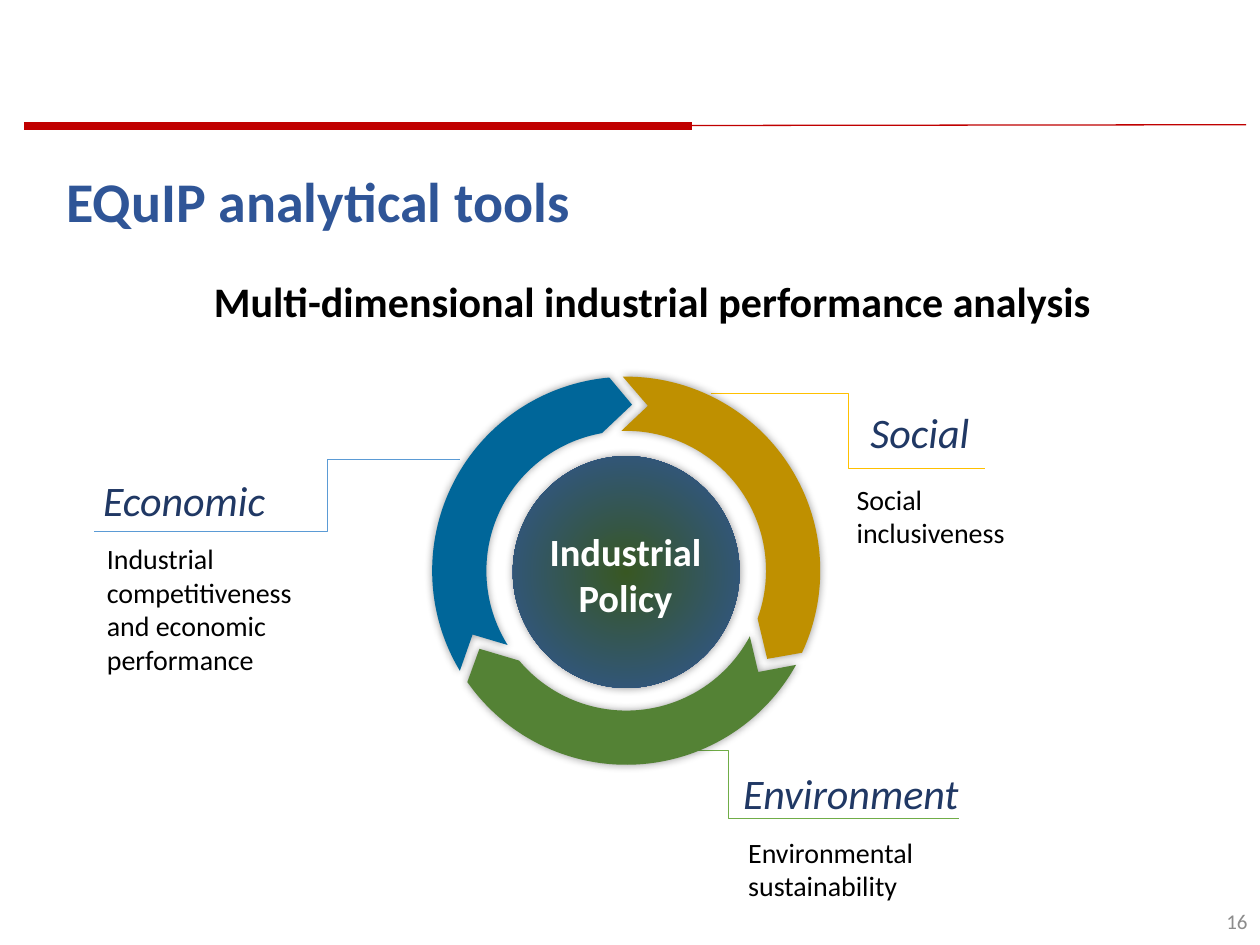
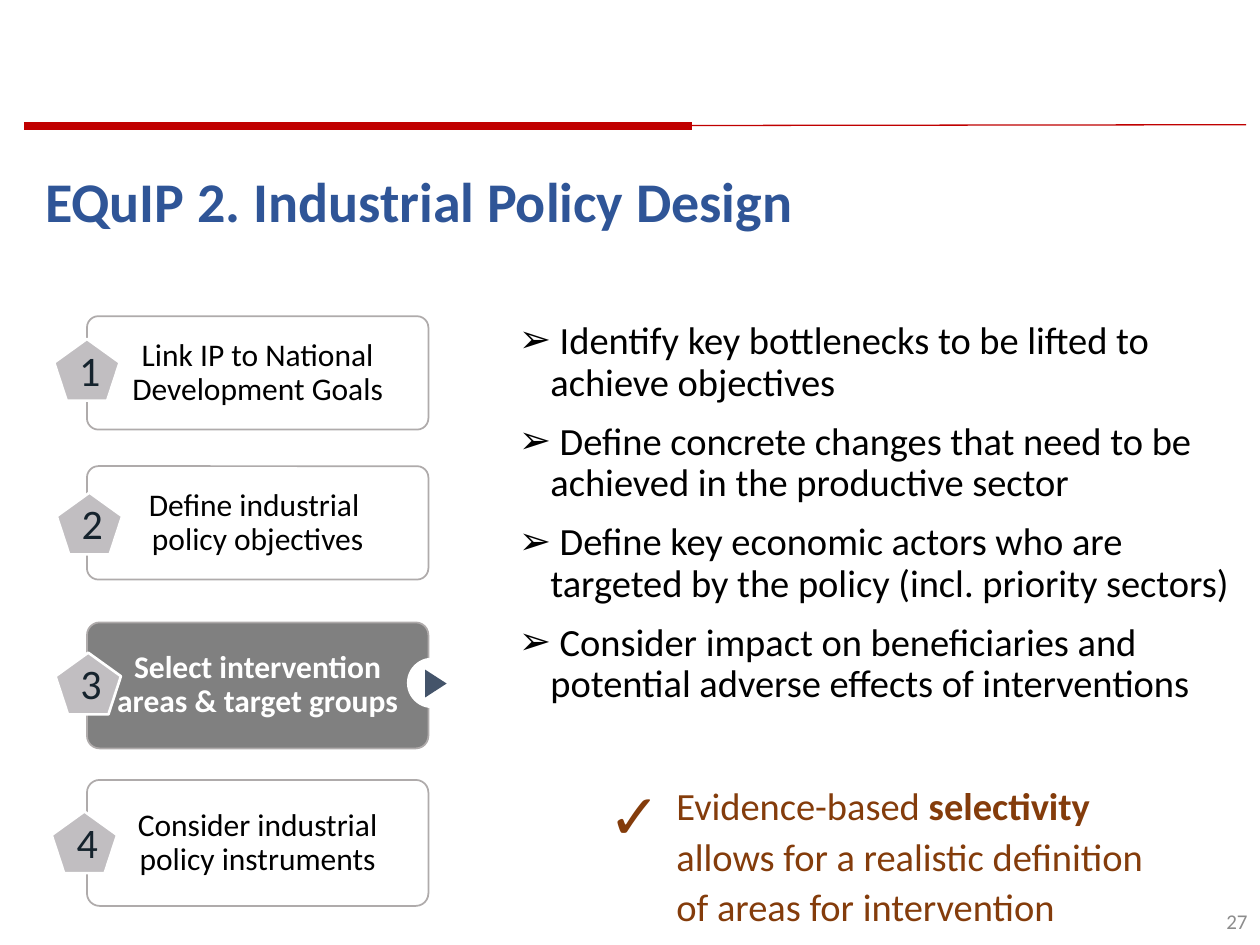
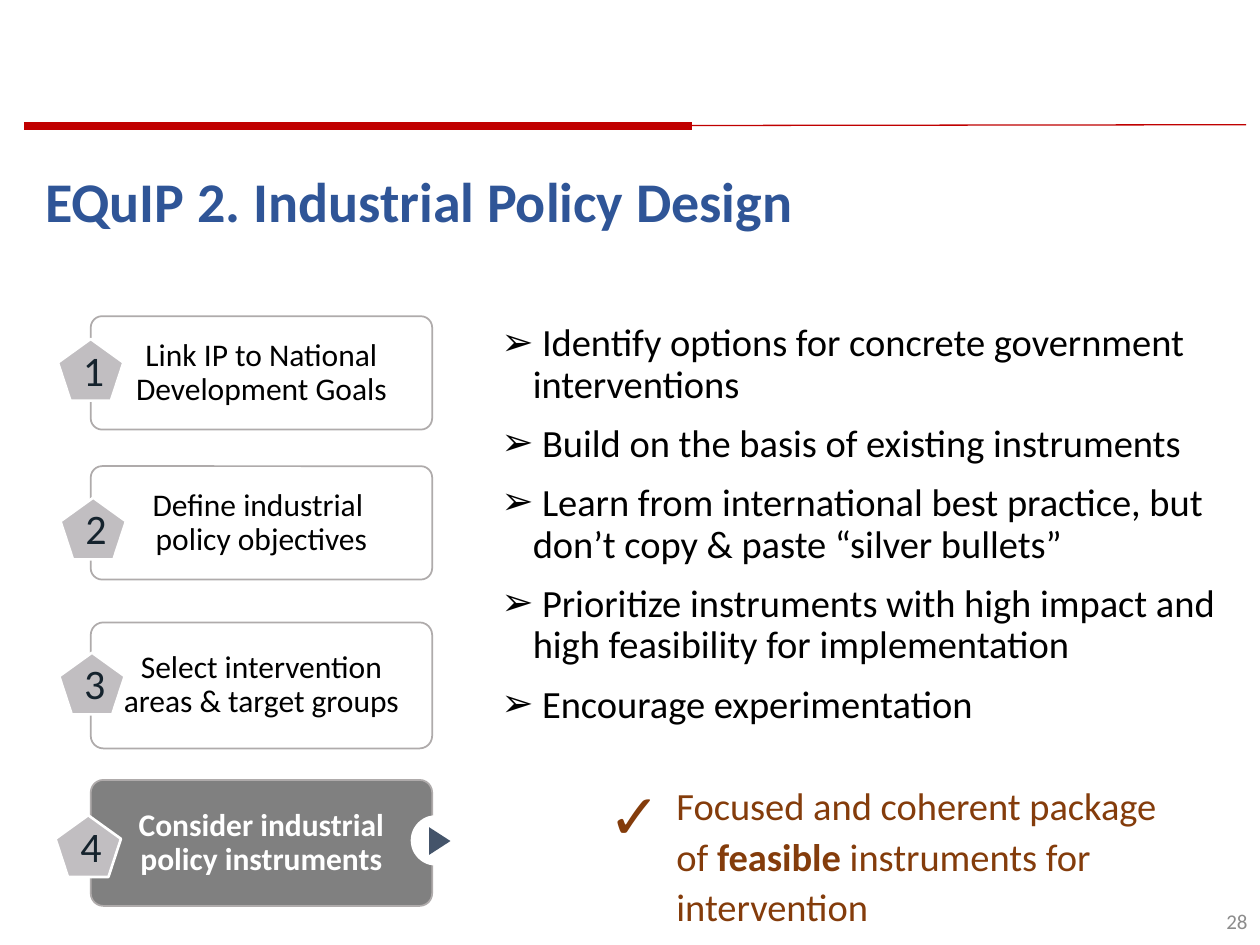
from math import cos, radians, sin, tan

from lxml.etree import SubElement
from pptx import Presentation
from pptx.dml.color import RGBColor
from pptx.enum.shapes import MSO_CONNECTOR as LINE, MSO_SHAPE as SHAPE
from pptx.enum.text import MSO_ANCHOR as ANCHOR, PP_ALIGN as ALIGN
from pptx.oxml import parse_xml
from pptx.oxml.ns import nsdecls, qn
from pptx.util import Inches, Pt

FONT = "Calibri"
BLACK = RGBColor(0x00, 0x00, 0x00)
WHITE = RGBColor(0xFF, 0xFF, 0xFF)
RED = RGBColor(0xC0, 0x00, 0x00)
TITLE_BLUE = RGBColor(0x2F, 0x55, 0x97)
NAVY = RGBColor(0x20, 0x38, 0x64)
SKY = RGBColor(0x5B, 0x9B, 0xD5)
AMBER = RGBColor(0xFF, 0xC0, 0x00)
LEAF = RGBColor(0x70, 0xAD, 0x47)
GOLD = RGBColor(0xBF, 0x90, 0x00)
GREEN = RGBColor(0x54, 0x82, 0x35)
TEAL = RGBColor(0x00, 0x66, 0x99)
DARK_GREEN = RGBColor(0x38, 0x57, 0x23)
GREY = RGBColor(0x80, 0x80, 0x80)
EDGE_GREY = RGBColor(0xAF, 0xAB, 0xAB)
BADGE_GREY = RGBColor(0xC1, 0xBE, 0xC1)
PAGE_GREY = RGBColor(0x8C, 0x8C, 0x8C)
INK = RGBColor(0x15, 0x23, 0x2D)
SLATE = RGBColor(0x44, 0x54, 0x6A)
BROWN = RGBColor(0x84, 0x3C, 0x0B)

W, H = 10, 7.5

DIMENSIONS = [
    dict(name="Economic", name_at=(0.72, 3.72, 2.6, 0.5),
         text="Industrial competitiveness and economic performance",
         text_at=(0.75, 4.25, 1.69, 1.18),
         start=(0.75, 4.22), end=(3.65, 3.65), bend_x=2.6, color=SKY),
    dict(name="Social", name_at=(6.81, 3.18, 1.12, 0.5),
         text="Social inclusiveness", text_at=(6.7, 3.78, 1.48, 0.64),
         start=(5.64, 3.12), end=(7.82, 3.72), bend_x=6.73, color=AMBER),
    dict(name="Environment", name_at=(5.8, 6.04, 2.25, 0.5),
         text="Environmental sustainability", text_at=(5.84, 6.58, 2.17, 0.64),
         start=(7.61, 6.5), end=(5.34, 5.96), bend_x=5.78, color=LEAF),
]

RING_COLORS = [GOLD, GREEN, TEAL]
RING_CENTER = (4.97, 4.53)
RING_TILT = 4.5
R_OUT, R_MID, R_IN = 1.54, 1.32, 1.11

STEPS = [
    ("Link IP to National Development Goals", 2.51, 0.9),
    ("Define industrial \vpolicy objectives", 3.7, 0.9),
    ("Select intervention areas & target groups", 4.94, 1),
    ("Consider industrial policy instruments", 6.19, 1),
]
BADGE_DX = [-0.26, -0.24, -0.25, -0.28]

DESIGN_SLIDES = [
    dict(page=27, left=0.69, active=2, badge_tops=[2.69, 3.91, 5.18, 6.44],
         body_at=(4.02, 2.5, 5.85, 3.71),
         bullets=[
             " Identify key bottlenecks to be lifted to achieve objectives",
             " Define concrete changes that need to be achieved in the productive sector",
             " Define key economic actors who are targeted by the policy (incl. priority sectors)",
             " Consider impact on beneficiaries and potential adverse effects of interventions",
         ],
         lesson="Evidence-based *selectivity* allows for a realistic definition of areas for intervention"),
    dict(page=28, left=0.72, active=3, badge_tops=[2.69, 3.95, 5.18, 6.47],
         body_at=(3.88, 2.52, 5.95, 3.71),
         bullets=[
             " Identify options for concrete government interventions",
             " Build on the basis of existing instruments",
             " Learn from international best practice, but don’t copy & paste “silver bullets”",
             " Prioritize instruments with high impact and high feasibility for implementation",
             " Encourage experimentation",
         ],
         lesson="Focused and coherent package of *feasible* instruments for intervention"),
]


def write(sp, paras, size=16, color=BLACK, bold=False, italic=False, align=ALIGN.LEFT,
          anchor=ANCHOR.TOP, spacing=1.0, before=0, bullet=None, wrap=True, margin=None):
    tf = sp.text_frame
    tf.word_wrap = wrap
    tf.vertical_anchor = anchor
    if margin is not None:
        tf.margin_left = tf.margin_right = tf.margin_top = tf.margin_bottom = Inches(margin)
    for i, text in enumerate([paras] if isinstance(paras, str) else paras):
        p = tf.add_paragraph() if i else tf.paragraphs[0]
        p.alignment = align
        p.line_spacing = spacing
        if i:
            p.space_before = Pt(before)
        if bullet:
            pPr = p._p.get_or_add_pPr()
            pPr.set("marL", str(Inches(0.25)))
            pPr.set("indent", str(-Inches(0.25)))
            SubElement(pPr, qn("a:buFont")).set("typeface", FONT)
            SubElement(pPr, qn("a:buChar")).set("char", bullet)
        for j, part in enumerate(text.split("*")):
            for k, line in enumerate(part.split("\v")):
                if k:
                    p.add_line_break()
                r = p.add_run()
                r.text = line
                f = r.font
                f.name, f.size, f.italic = FONT, Pt(size), italic
                f.bold = bold or j % 2 == 1
                f.color.rgb = color
    return sp


def add_text(s, at, paras, **fmt):
    return write(s.shapes.add_textbox(*map(Inches, at)), paras, **fmt)


def paint(sp, fill=None, line=None, width=1):
    sp.shadow.inherit = False
    if fill is None:
        sp.fill.background()
    else:
        sp.fill.solid()
        sp.fill.fore_color.rgb = fill
    if line is None:
        sp.line.fill.background()
    else:
        sp.line.color.rgb = line
        sp.line.width = Pt(width)
    return sp


def add_shape(s, kind, at, **look):
    return paint(s.shapes.add_shape(kind, *map(Inches, at)), **look)


def add_line(s, start, end, color, width, bend_x=None):
    kind = LINE.STRAIGHT if bend_x is None else LINE.ELBOW
    c = s.shapes.add_connector(kind, *map(Inches, start + end))
    c.line.color.rgb = color
    c.line.width = Pt(width)
    spPr = c._element.spPr
    SubElement(spPr, qn("a:effectLst"))
    if bend_x is not None:
        share = (bend_x - start[0]) / (end[0] - start[0])
        guides = spPr.find(qn("a:prstGeom")).get_or_add_avLst()
        gd = SubElement(guides, qn("a:gd"))
        gd.set("name", "adj1")
        gd.set("fmla", f"val {round(share * 100000)}")


def add_glow(sp):
    effects = sp._element.spPr.find(qn("a:effectLst"))
    effects.append(parse_xml(
        f'<a:outerShdw {nsdecls("a")} blurRad="{Pt(5)}" dist="0" dir="0">'
        '<a:srgbClr val="000000"><a:alpha val="40000"/></a:srgbClr></a:outerShdw>'))


def radial_fill(sp, inner, outer):
    sp.fill.gradient()
    grad = sp._element.spPr.find(qn("a:gradFill"))
    grad.getparent().replace(grad, parse_xml(
        f'<a:gradFill {nsdecls("a")} rotWithShape="1"><a:gsLst>'
        f'<a:gs pos="0"><a:srgbClr val="{inner}"/></a:gs>'
        f'<a:gs pos="98000"><a:srgbClr val="{outer}"/></a:gs></a:gsLst>'
        '<a:path path="circle"><a:fillToRect l="50000" t="50000" r="50000" b="50000"/>'
        '</a:path></a:gradFill>'))


def ring_point(radius, angle):
    cx, cy = RING_CENTER
    a = radians(angle - RING_TILT)
    return Inches(cx + radius * sin(a)), Inches(cy - radius * cos(a))


def arc(radius, first, last, parts=2):
    step = (last - first) / parts
    reach = 4 / 3 * tan(radians(step / 4))
    handle = radius * (1 + reach ** 2) ** 0.5
    lean = step / abs(step) * abs(atan_deg(reach))
    curves = []
    for i in range(parts):
        a, b = first + i * step, first + (i + 1) * step
        curves.append(("cubicBezTo", [ring_point(handle, a + lean),
                                      ring_point(handle, b - lean),
                                      ring_point(radius, b)]))
    return curves


def atan_deg(x):
    return (x - x ** 3 / 3 + x ** 5 / 5) / radians(1)


def add_ring_arrow(s, turn, color):
    rim = [ring_point(R_OUT, a) for a in range(-1, 116)]
    tip, notch = ring_point(R_MID, 122), ring_point(R_MID, 7.5)
    fb = s.shapes.build_freeform(*rim[0])
    fb.add_line_segments(rim[1:] + [tip, ring_point(R_IN, 110), ring_point(R_IN, -2), notch],
                         close=True)
    sp = fb.convert_to_shape()
    steps = [("moveTo", rim[:1]), *arc(R_OUT, -1, 115),
             ("lnTo", [tip]), ("lnTo", [ring_point(R_IN, 110)]), *arc(R_IN, 110, -2),
             ("lnTo", [notch]), ("close", [])]
    outline = next(sp._element.iter(qn("a:path")))
    for child in list(outline):
        outline.remove(child)
    for tag, points in steps:
        node = SubElement(outline, qn(f"a:{tag}"))
        for x, y in points:
            pt = SubElement(node, qn("a:pt"))
            pt.set("x", str(x - sp.left))
            pt.set("y", str(y - sp.top))
    cx, cy = map(Inches, RING_CENTER)
    dx, dy = sp.left + sp.width / 2 - cx, sp.top + sp.height / 2 - cy
    a = radians(turn)
    sp.left = round(cx + dx * cos(a) - dy * sin(a) - sp.width / 2)
    sp.top = round(cy + dx * sin(a) + dy * cos(a) - sp.height / 2)
    sp.rotation = turn
    add_glow(paint(sp, fill=color))


def new_slide(prs, title, left, page):
    s = prs.slides.add_slide(prs.slide_layouts[6])
    add_text(s, (W - 2.25, 7.11, 2.25, 0.4), str(page), size=12, color=PAGE_GREY,
             align=ALIGN.RIGHT, anchor=ANCHOR.MIDDLE)
    add_line(s, (0.19, 1), (5.49, 1), RED, 4.5)
    add_line(s, (2.67, 1), (9.89, 0.99), RED, 0.75)
    add_text(s, (left, 1.13, 9.06, 0.98), title, size=32, color=TITLE_BLUE, bold=True,
             anchor=ANCHOR.MIDDLE, spacing=0.9)
    return s


def tools_slide(prs):
    s = new_slide(prs, "EQuIP analytical tools", 0.43, 16)
    add_text(s, (1.6, 2.14, 7.23, 0.5), "Multi-dimensional industrial performance analysis",
             size=24, bold=True, wrap=False)
    for d in DIMENSIONS:
        add_line(s, d["start"], d["end"], d["color"], 0.5, d["bend_x"])
        add_text(s, d["name_at"], d["name"], size=24, color=NAVY, italic=True)
        add_text(s, d["text_at"], d["text"])
    for i, color in enumerate(RING_COLORS):
        add_ring_arrow(s, RING_TILT + i * 360 / len(RING_COLORS), color)
    hub = add_shape(s, SHAPE.OVAL, (4.07, 3.62, 1.8, 1.84))
    radial_fill(hub, DARK_GREEN, TITLE_BLUE)
    add_glow(hub)
    add_text(s, (4.05, 4.14, 1.83, 0.84), "Industrial Policy", size=22, color=WHITE,
             bold=True, align=ALIGN.CENTER)


def design_slide(prs, page, left, active, badge_tops, body_at, bullets, lesson):
    s = new_slide(prs, "EQuIP 2. Industrial Policy Design", 0.26, page)
    for i, (text, top, height) in enumerate(STEPS):
        on = i == active
        box = add_shape(s, SHAPE.ROUNDED_RECTANGLE, (left, top, 2.71, height),
                        fill=GREY if on else None, line=EDGE_GREY)
        box.adjustments[0] = 0.1
        write(box, text, size=18, color=WHITE if on else BLACK, bold=on,
              align=ALIGN.CENTER, anchor=ANCHOR.MIDDLE, spacing=0.9, margin=0.12)
    for i, (dx, top) in enumerate(zip(BADGE_DX, badge_tops), 1):
        badge = add_shape(s, SHAPE.REGULAR_PENTAGON, (left + dx, top, 0.52, 0.49),
                          fill=BADGE_GREY, line=WHITE, width=1.5)
        write(badge, str(i), size=24, color=INK, align=ALIGN.CENTER, anchor=ANCHOR.BOTTOM)
    _, top, height = STEPS[active]
    middle = top + height / 2 - 0.02
    add_shape(s, SHAPE.OVAL, (left + 2.54, middle - 0.2, 0.4, 0.4), fill=WHITE)
    arrow = add_shape(s, SHAPE.ISOSCELES_TRIANGLE, (left + 2.66, middle - 0.08, 0.22, 0.17),
                      fill=SLATE)
    arrow.rotation = 90
    add_text(s, body_at, bullets, size=22, spacing=0.9, before=10, bullet="➢")
    add_text(s, (5.27, 6.12, 4.15, 1.34), lesson, size=22, color=BROWN, spacing=1.1)
    add_text(s, (4.54, 6.11, 1, 0.71), "✓", size=36, color=BROWN,
             align=ALIGN.CENTER, anchor=ANCHOR.MIDDLE)


def main():
    prs = Presentation()
    prs.slide_width, prs.slide_height = Inches(W), Inches(H)
    tools_slide(prs)
    for content in DESIGN_SLIDES:
        design_slide(prs, **content)
    prs.save("out.pptx")


if __name__ == "__main__":
    main()
